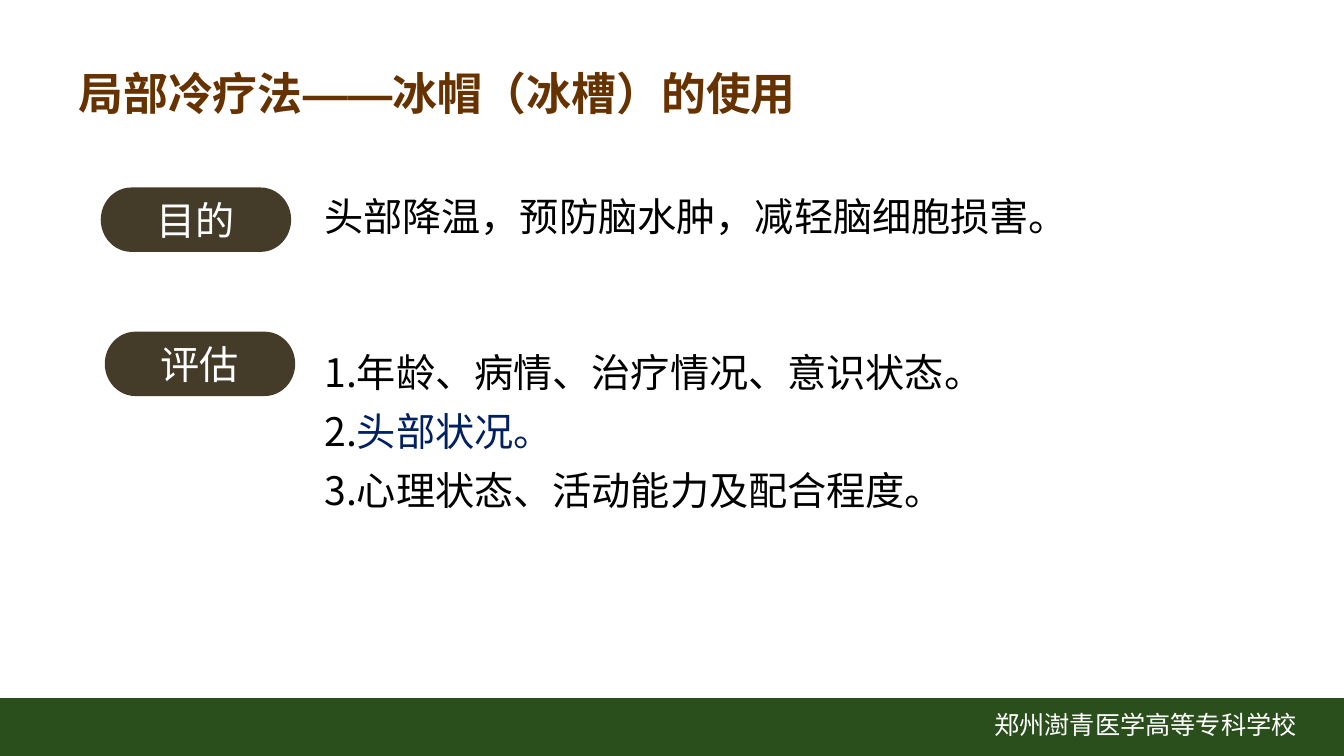
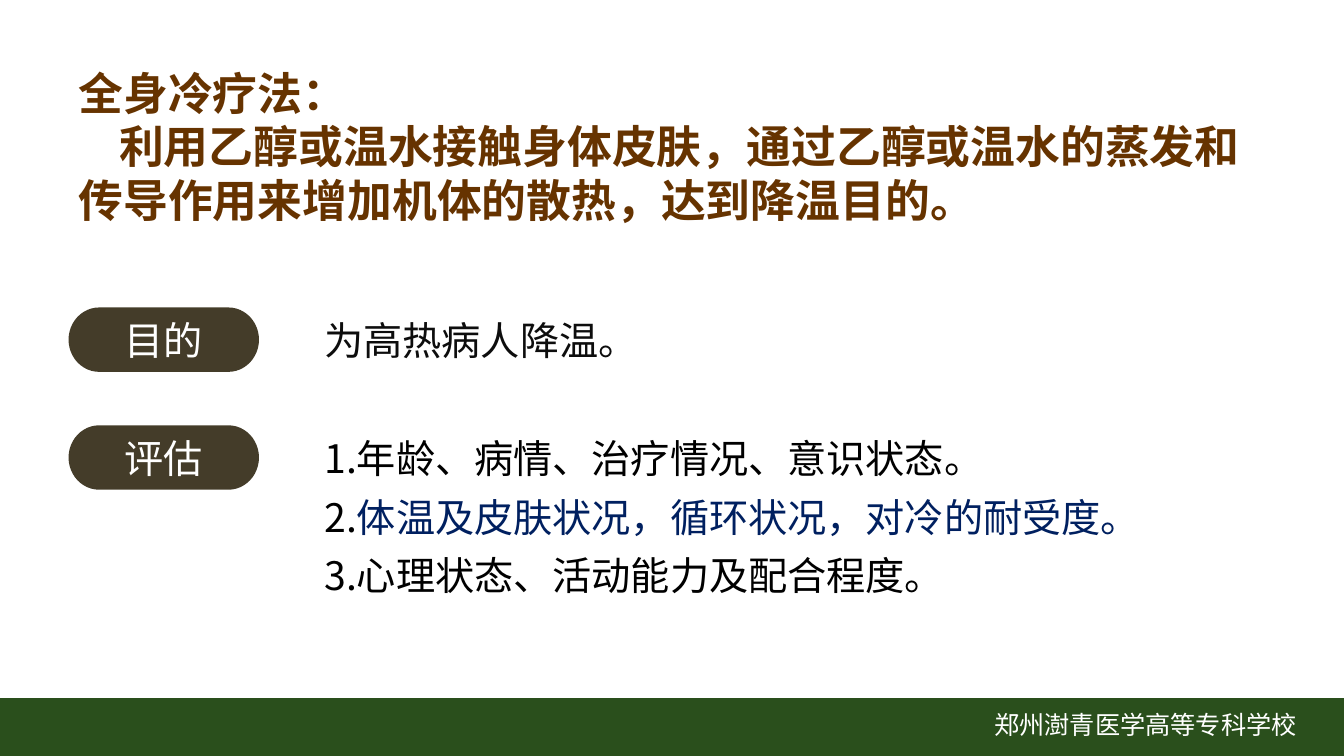
from dataclasses import dataclass

from pptx import Presentation
from pptx.dml.color import RGBColor
from pptx.enum.shapes import MSO_SHAPE
from pptx.enum.text import MSO_ANCHOR, PP_ALIGN
from pptx.oxml.ns import qn
from pptx.util import Pt

RECT = MSO_SHAPE.RECTANGLE
PILL = MSO_SHAPE.FLOWCHART_TERMINATOR
MIDDLE = MSO_ANCHOR.MIDDLE
CENTER = PP_ALIGN.CENTER


@dataclass(frozen=True)
class Theme:
    green: str = "2A4F1C"
    brown: str = "663300"
    umber: str = "443C29"
    navy: str = "002060"
    black: str = "000000"
    ink: str = "0D0D0D"
    white: str = "FFFFFF"
    head: str = "Arial"
    body: str = "Noto Sans CJK SC"
    large: int = 32
    mid: int = 28
    small: int = 18


T = Theme()
WIDE, HIGH = 960, 540
LEFT = 49
TEXT_X = 224.6
SCHOOL = "郑州澍青医学高等专科学校"


def add_run(para, text, font, size, color, bold=False):
    run = para.add_run()
    run.text = text
    run.font.name = font
    run.font.size = Pt(size)
    run.font.bold = bold
    run.font.color.rgb = RGBColor.from_string(color)
    props = run._r.get_or_add_rPr()
    east = props.makeelement(qn("a:ea"), {"typeface": font})
    props.find(qn("a:latin")).addnext(east)


def add_box(slide, x, y, w, h):
    frame = slide.shapes.add_textbox(Pt(x), Pt(y), Pt(w), Pt(h)).text_frame
    frame.word_wrap = True
    return frame


def add_para(frame, index):
    return frame.add_paragraph() if index else frame.paragraphs[0]


def add_shape(slide, kind, x, y, w, h, color):
    shape = slide.shapes.add_shape(kind, Pt(x), Pt(y), Pt(w), Pt(h))
    shape.shadow.inherit = False
    shape.fill.solid()
    shape.fill.fore_color.rgb = RGBColor.from_string(color)
    shape.line.fill.background()
    return shape


def add_foot(slide):
    add_shape(slide, RECT, 0, 498.7, WIDE, 42.5, T.green)
    frame = add_box(slide, 703.2, 503.3, 232.6, 36.7)
    add_run(frame.paragraphs[0], SCHOOL, T.body, T.small, T.white)


def add_title(slide, w, h, lines):
    frame = add_box(slide, LEFT, 43.2, w, h)
    for index, (text, indent) in enumerate(lines):
        para = add_para(frame, index)
        if indent:
            para._p.get_or_add_pPr().set("indent", str(Pt(indent)))
        add_run(para, text, T.head, T.large, T.brown, True)


def add_pill(slide, x, y, text):
    frame = add_shape(slide, PILL, x, y, 136, 46, T.umber).text_frame
    frame.vertical_anchor = MIDDLE
    para = frame.paragraphs[0]
    para.alignment = CENTER
    add_run(para, text, T.head, T.mid, T.white)


def add_aim(slide, y, w, text, color):
    frame = add_box(slide, TEXT_X, y, w, 41)
    add_run(frame.paragraphs[0], text, T.body, T.mid, color)


def add_list(slide, y, focus):
    frame = add_box(slide, TEXT_X, y, 607, 171.4)
    items = (
        ("年龄、病情、治疗情况、意识状态。", T.black),
        (focus, T.navy),
        ("心理状态、活动能力及配合程度。", T.black),
    )
    for index, (text, color) in enumerate(items):
        para = add_para(frame, index)
        para.line_spacing = 1.25
        add_run(para, f"{index + 1}.", T.body, T.mid, T.black)
        add_run(para, text, T.body, T.mid, color)


def add_slide(deck):
    slide = deck.slides.add_slide(deck.slide_layouts[6])
    add_foot(slide)
    return slide


def main():
    deck = Presentation()
    deck.slide_width, deck.slide_height = Pt(WIDE), Pt(HIGH)

    slide = add_slide(deck)
    add_title(slide, 612, 46, [("局部冷疗法——冰帽（冰槽）的使用", 0)])
    add_pill(slide, 72, 133.9, "目的")
    add_pill(slide, 74.9, 236.9, "评估")
    add_aim(slide, 133.9, 556, "头部降温，预防脑水肿，减轻脑细胞损害。", T.black)
    add_list(slide, 236.9, "头部状况。")

    slide = add_slide(deck)
    add_title(slide, 862, 124, [
        ("全身冷疗法：", 0),
        ("利用乙醇或温水接触身体皮肤，通过乙醇或温水的蒸发和"
         "传导作用来增加机体的散热，达到降温目的。", 29),
    ])
    add_pill(slide, LEFT, 219.6, "目的")
    add_pill(slide, LEFT, 303.8, "评估")
    add_aim(slide, 222.5, 278, "为高热病人降温。", T.ink)
    add_list(slide, 298.1, "体温及皮肤状况，循环状况，对冷的耐受度。")

    deck.save("out.pptx")


if __name__ == "__main__":
    main()
